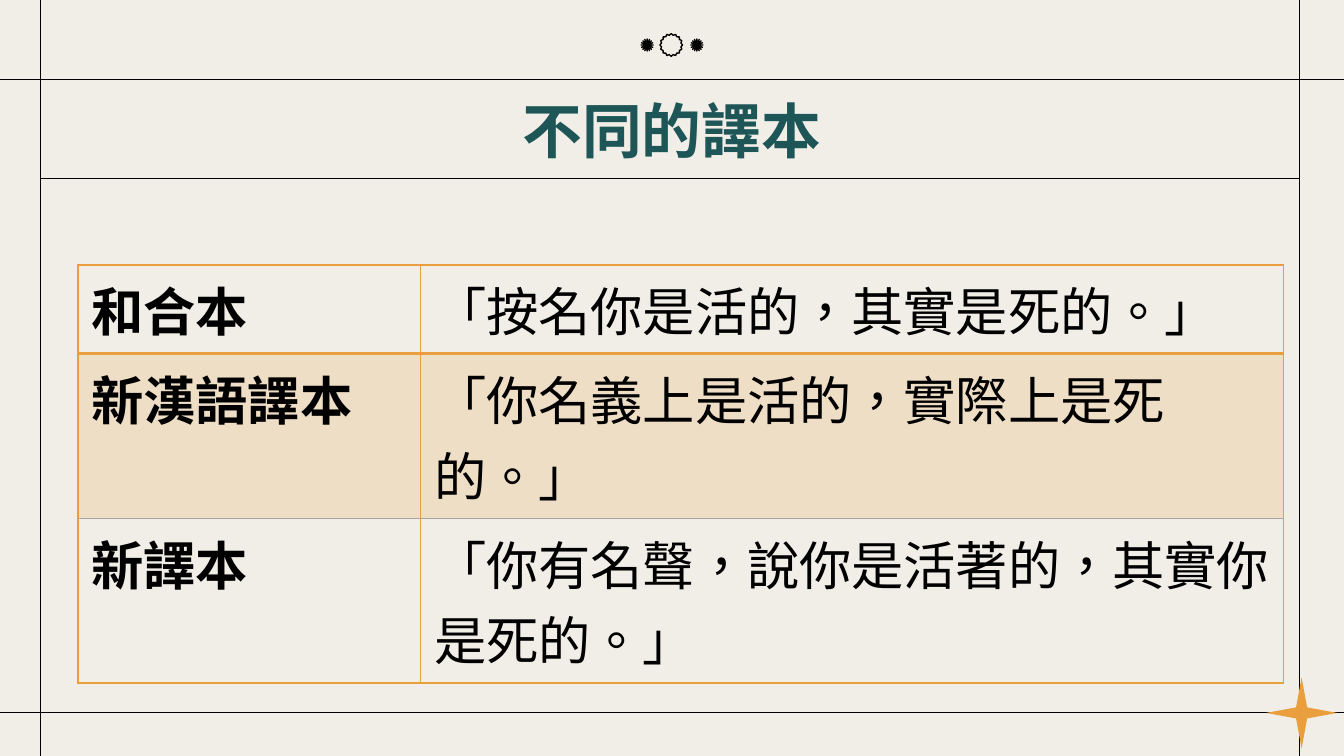
from lxml.etree import SubElement
from pptx import Presentation
from pptx.dml.color import RGBColor
from pptx.enum.shapes import MSO_CONNECTOR, MSO_SHAPE
from pptx.enum.text import MSO_ANCHOR, PP_ALIGN
from pptx.oxml.ns import qn
from pptx.util import Inches, Pt

TITLE = "不同的譯本"
VERSES = [
    ("和合本", "「按名你是活的，其實是死的。」"),
    ("新漢語譯本", "「你名義上是活的，實際上是死的。」"),
    ("新譯本", "「你有名聲，說你是活著的，其實你是死的。」"),
]
FRAME_LINES = [
    (-0.06, 0.59, 10.03, 0.59),
    (0.3, -0.17, 0.3, 5.79),
    (-0.13, 5.3, 10.13, 5.3),
    (9.67, -0.19, 9.67, 5.81),
    (0.3, 1.33, 9.67, 1.33),
]
STARS = [
    (MSO_SHAPE.STAR_16_POINT, 4.91, 0.25, 0.17, 0.43, None, "ink"),
    (MSO_SHAPE.STAR_16_POINT, 5.14, 0.29, 0.09, 0, "ink", "ink"),
    (MSO_SHAPE.STAR_16_POINT, 4.77, 0.29, 0.09, 0, "ink", "ink"),
    (MSO_SHAPE.STAR_4_POINT, 9.42, 5.04, 0.53, 0.11, "accent", None),
]
COLS = [2.55, 6.42]
ROW_HEIGHT = 0.41
ROW_RULES = [("accent", 1), ("accent", 2), ("divider", 0.5), ("accent", 1)]
SHADED_ROW = 1

THEME = {
    "font": "Noto Sans CJK TC",
    "language": "zh-TW",
    "paper": "F1EEE8",
    "ink": "000000",
    "title": "1E5658",
    "accent": "EA9F3F",
    "divider": "A8A69F",
    "title_size": 32,
    "table_size": 28,
    "rule": 0.75,
    "shade_alpha": 20,
}


def color(name):
    return RGBColor.from_string(THEME[name])


def paint(fill, name):
    if name is None:
        fill.background()
    else:
        fill.solid()
        fill.fore_color.rgb = color(name)


def write(tf, text, size, ink, bold):
    p = tf.paragraphs[0]
    r = p.add_run()
    r.text = text
    for key, value in {"name": THEME["font"], "size": Pt(THEME[size]), "bold": bold}.items():
        setattr(r.font, key, value)
    r.font.color.rgb = color(ink)
    r.font._element.set("lang", THEME["language"])
    SubElement(r.font._element, qn("a:ea"), typeface=THEME["font"])
    return p


def add_rule(s, x1, y1, x2, y2):
    line = s.shapes.add_connector(MSO_CONNECTOR.STRAIGHT, *map(Inches, (x1, y1, x2, y2)))
    line.line.color.rgb = color("ink")
    line.line.width = Pt(THEME["rule"])
    SubElement(line._element.spPr, qn("a:effectLst"))


def add_star(s, kind, left, top, size, adj, fill, line):
    sp = s.shapes.add_shape(kind, *map(Inches, (left, top, size, size)))
    sp.shadow.inherit = False
    sp.adjustments[0] = adj
    paint(sp.fill, fill)
    paint(sp.line.fill, line)
    if line:
        sp.line.width = Pt(THEME["rule"])


def add_title(s):
    sp = s.shapes.title
    box = {"left": 1.59, "top": 0.7, "width": 6.82, "height": 0.53}
    for key, value in box.items():
        setattr(sp, key, Inches(value))
    tf = sp.text_frame
    tf.word_wrap = True
    tf.vertical_anchor = MSO_ANCHOR.MIDDLE
    for side in ("left", "top", "right", "bottom"):
        setattr(tf, f"margin_{side}", Inches(0.1))
    write(tf, TITLE, "title_size", "title", True).alignment = PP_ALIGN.CENTER


def add_borders(cell, row):
    tc_pr = cell._tc.get_or_add_tcPr()
    side = ("accent", 1)
    edges = {"lnL": side, "lnR": side, "lnT": ROW_RULES[row], "lnB": ROW_RULES[row + 1]}
    for tag, (name, width) in edges.items():
        ln = SubElement(tc_pr, qn(f"a:{tag}"), w=str(Pt(width)))
        solid = SubElement(ln, qn("a:solidFill"))
        SubElement(solid, qn("a:srgbClr"), val=THEME[name])


def add_verses(s):
    height = ROW_HEIGHT * len(VERSES)
    frame = s.shapes.add_table(
        len(VERSES), len(COLS), *map(Inches, (0.58, 1.97, sum(COLS), height)))
    table = frame.table
    table.first_row = table.horz_banding = False
    for col, width in zip(table.columns, COLS):
        col.width = Inches(width)
    for i, texts in enumerate(VERSES):
        table.rows[i].height = Inches(ROW_HEIGHT)
        for j, text in enumerate(texts):
            cell = table.cell(i, j)
            write(cell.text_frame, text, "table_size", "ink", j == 0)
            add_borders(cell, i)
            paint(cell.fill, "accent" if i == SHADED_ROW else None)
            if i == SHADED_ROW:
                rgb = cell._tc.tcPr.find(qn("a:solidFill")).find(qn("a:srgbClr"))
                SubElement(rgb, qn("a:alpha"), val=str(THEME["shade_alpha"] * 1000))


def main():
    prs = Presentation()
    prs.slide_width = Inches(10)
    prs.slide_height = prs.slide_width * 9 // 16
    s = prs.slides.add_slide(prs.slide_layouts[5])
    paint(s.background.fill, "paper")
    for line in FRAME_LINES:
        add_rule(s, *line)
    for star in STARS:
        add_star(s, *star)
    add_title(s)
    add_verses(s)
    prs.save("out.pptx")


if __name__ == "__main__":
    main()
